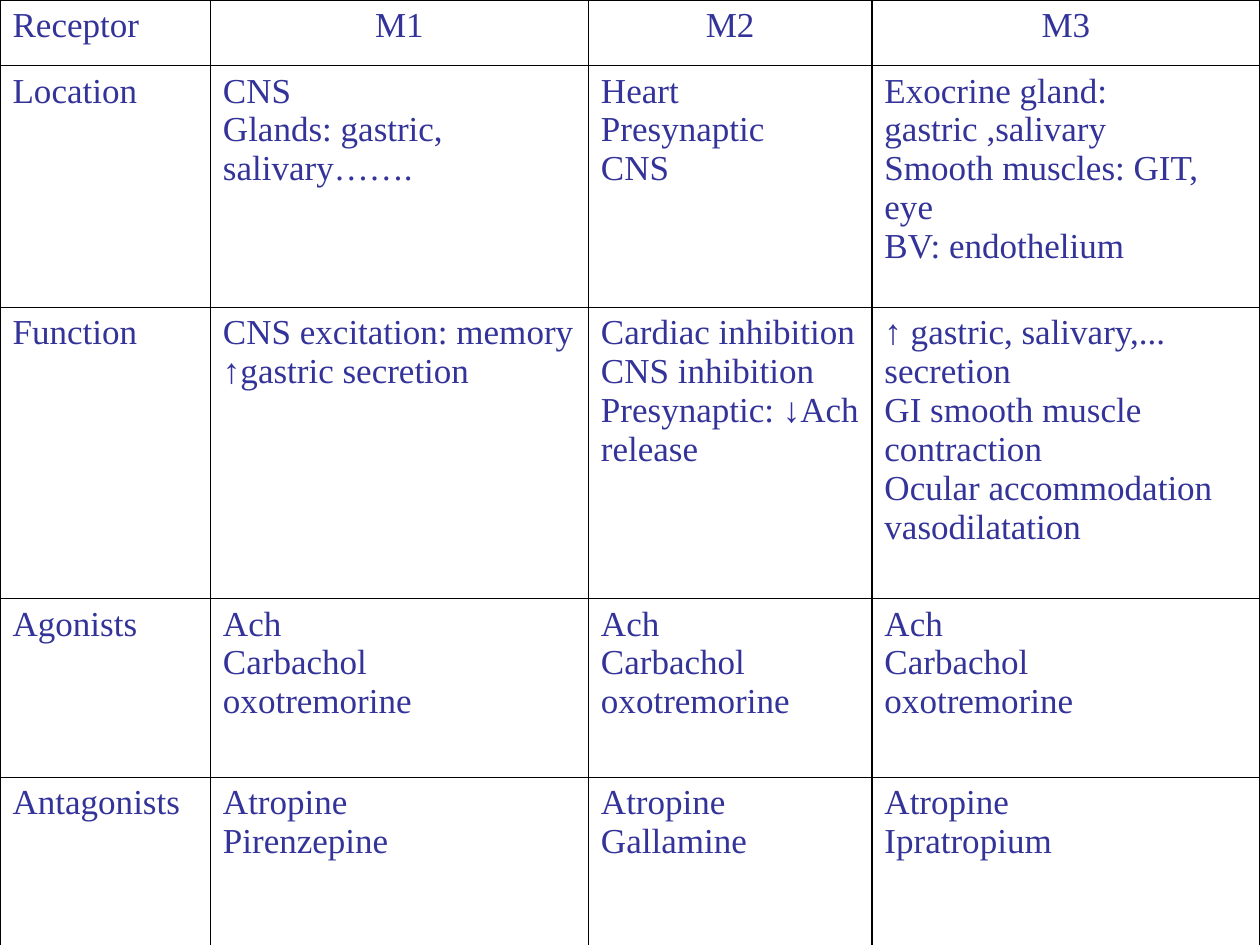
from dataclasses import dataclass

from lxml import etree
from pptx import Presentation
from pptx.dml.color import RGBColor
from pptx.enum import text
from pptx.oxml import ns
from pptx.util import Inches, Pt


@dataclass(frozen=True)
class Theme:
    font: str = "Times New Roman"
    size: int = 20
    ink: str = "333399"
    border: str = "000000"
    border_width: int = 1


THEME = Theme()
COLUMN_WIDTHS = [1.67, 3, 2.25, 3.08]
ROW_HEIGHTS = [0.52, 1.92, 2.31, 1.42, 1.44]
AGONISTS = "Ach\nCarbachol\noxotremorine"
RECEPTORS = [
    ["Receptor", "M1", "M2", "M3"],
    [
        "Location",
        "CNS\nGlands: gastric, salivary…….",
        "Heart\nPresynaptic\nCNS",
        "Exocrine gland: gastric ,salivary\nSmooth muscles: GIT, eye\nBV: endothelium",
    ],
    [
        "Function",
        "CNS excitation: memory\n↑gastric secretion",
        "Cardiac inhibition\nCNS inhibition\nPresynaptic: ↓Ach release",
        "↑ gastric, salivary,... secretion\nGI smooth muscle contraction\n"
        "Ocular accommodation\nvasodilatation",
    ],
    ["Agonists"] + [AGONISTS] * 3,
    ["Antagonists", "Atropine\nPirenzepine", "Atropine\nGallamine", "Atropine\nIpratropium"],
]


def write_text(frame, content, *, align=text.PP_ALIGN.LEFT, size=THEME.size, color=THEME.ink):
    """Fill a text frame, one paragraph for each line of content."""
    frame.text = content
    for paragraph in frame.paragraphs:
        paragraph.alignment = align
        for run in paragraph.runs:
            run.font.name = THEME.font
            run.font.size = Pt(size)
            run.font.color.rgb = RGBColor.from_string(color)


def add_borders(cell):
    properties = cell._tc.get_or_add_tcPr()
    for position, side in enumerate(("lnL", "lnR", "lnT", "lnB")):
        line = etree.Element(ns.qn(f"a:{side}"), w=str(Pt(THEME.border_width)))
        fill = etree.SubElement(line, ns.qn("a:solidFill"))
        etree.SubElement(fill, ns.qn("a:srgbClr"), val=THEME.border)
        properties.insert(position, line)


def add_receptor_table(slide):
    table = slide.shapes.add_table(
        len(ROW_HEIGHTS), len(COLUMN_WIDTHS), Inches(0), Inches(0),
        Inches(sum(COLUMN_WIDTHS)), Inches(sum(ROW_HEIGHTS)),
    ).table
    table.first_row = table.horz_banding = False
    for column, width in zip(table.columns, COLUMN_WIDTHS):
        column.width = Inches(width)
    for row, height in zip(table.rows, ROW_HEIGHTS):
        row.height = Inches(height)

    for row_index, entries in enumerate(RECEPTORS):
        for column_index, entry in enumerate(entries):
            cell = table.cell(row_index, column_index)
            is_receptor_name = row_index == 0 and column_index > 0
            align = text.PP_ALIGN.CENTER if is_receptor_name else text.PP_ALIGN.LEFT
            write_text(cell.text_frame, entry, align=align)
            cell.fill.background()
            add_borders(cell)


def main():
    deck = Presentation()
    deck.slide_width, deck.slide_height = Inches(10), Inches(7.5)
    slide = deck.slides.add_slide(deck.slide_layouts[6])
    add_receptor_table(slide)
    deck.save("out.pptx")


if __name__ == "__main__":
    main()
